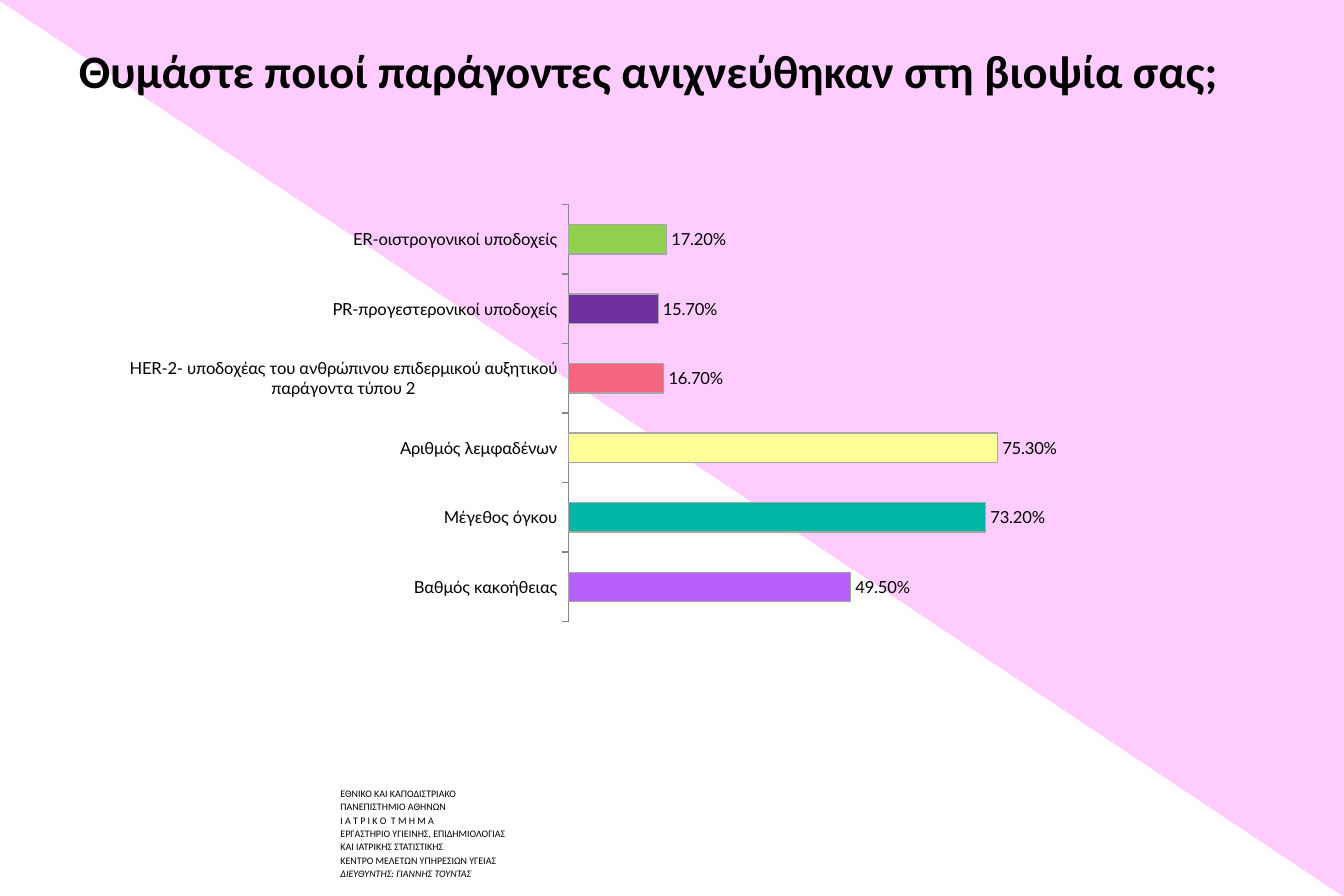
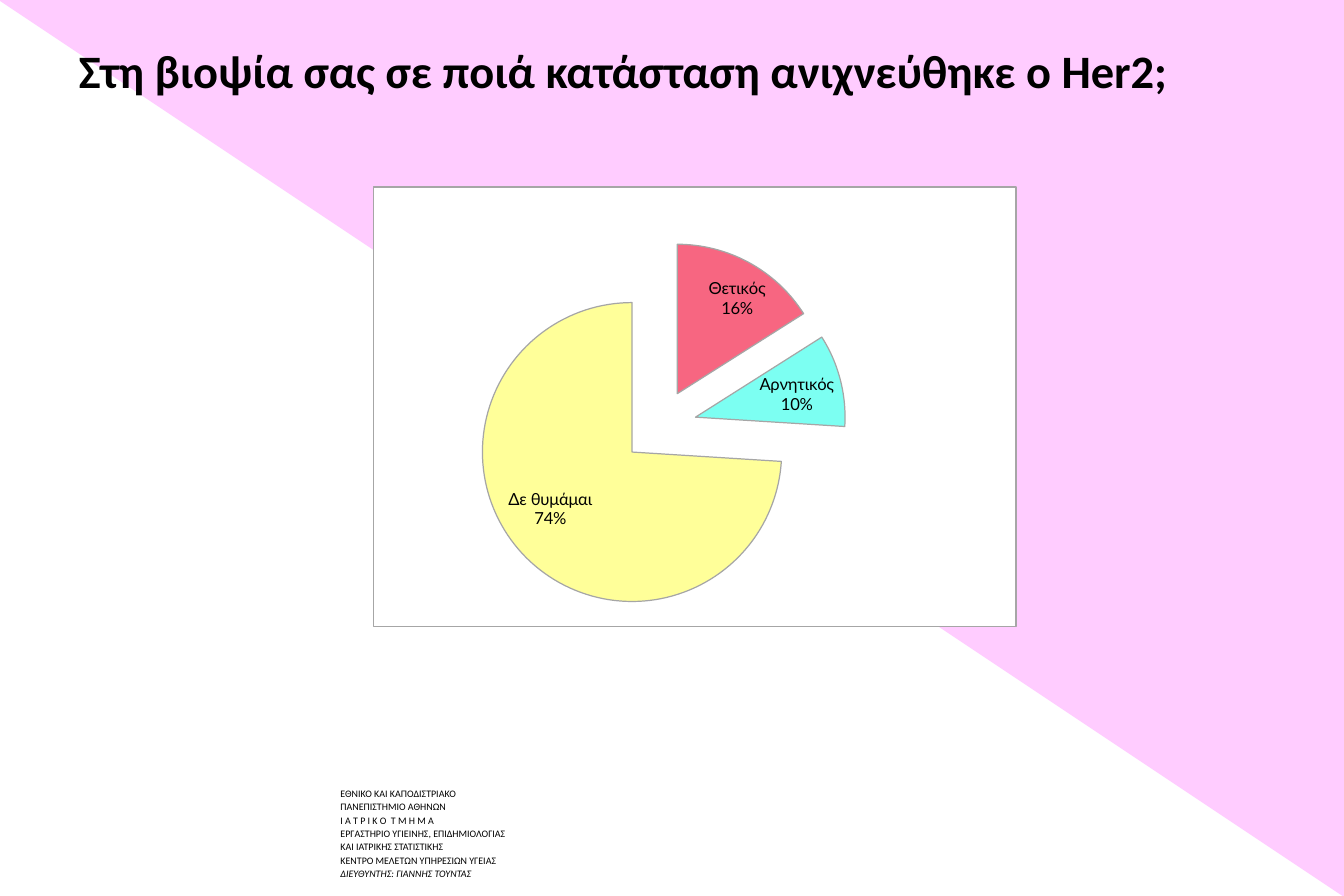
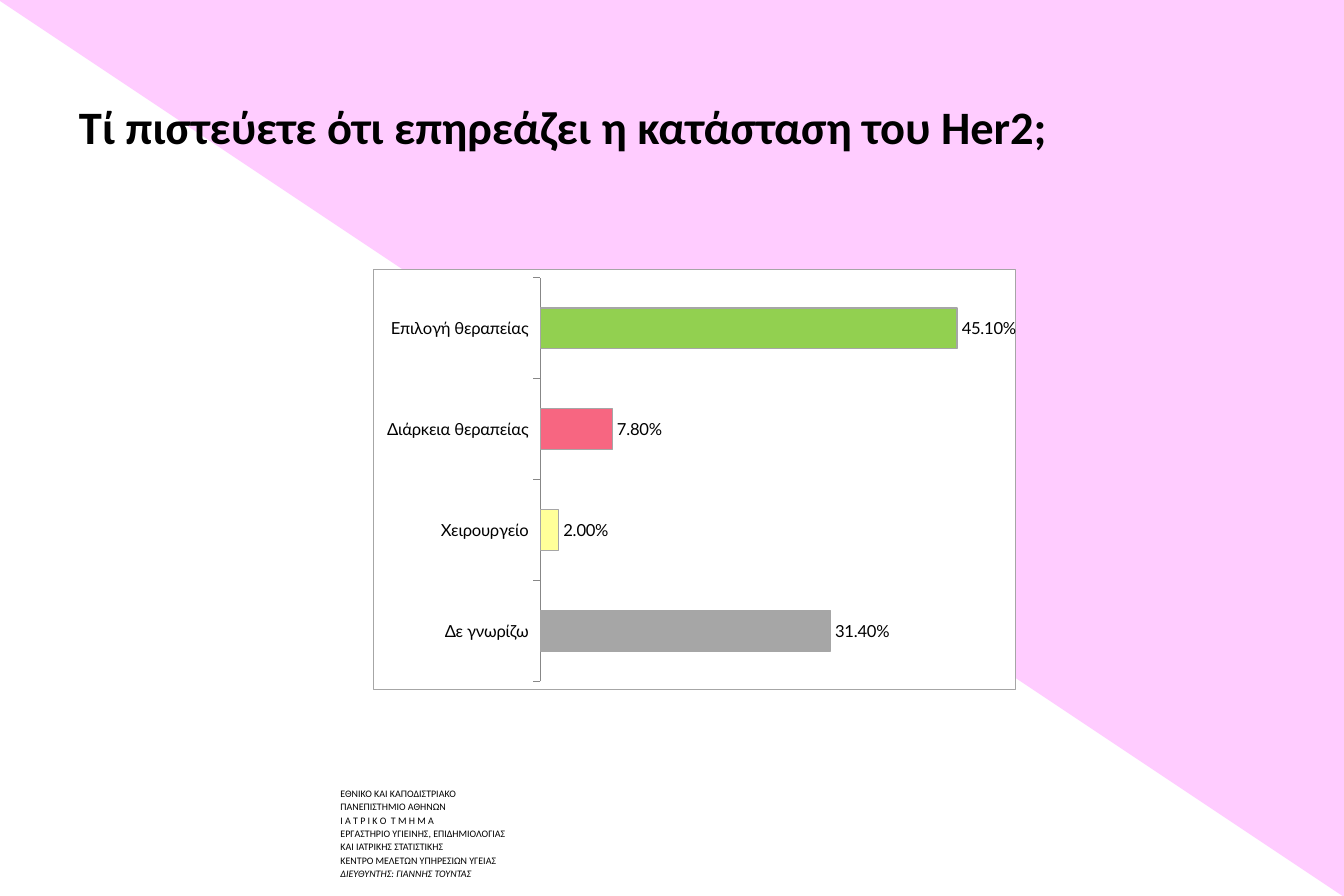
from dataclasses import dataclass

from pptx import Presentation
from pptx import util as u
from pptx.chart.data import CategoryChartData
from pptx.dml.color import RGBColor
from pptx.enum import chart as kinds, shapes, text
from pptx.oxml import parse_xml
from pptx.oxml.ns import nsdecls, qn

SCALE = 9144  # EMU per px, 100 px to the inch
WIDE, HIGH = 1125, 750


@dataclass(frozen=True)
class Theme:
    ink: str = "000000"
    paper: str = "FFFFFF"
    pink: str = "FFCCFF"
    edge: str = "A6A6A6"
    axis: str = "878787"
    green: str = "92D050"
    plum: str = "7030A0"
    rose: str = "F76681"
    lemon: str = "FFFF99"
    teal: str = "00B7A5"
    violet: str = "B760F9"
    aqua: str = "7CFFF2"
    font: str = "Calibri"
    chart_font: str = "Lato"
    title_size: int = 28
    chart_size: int = 10
    foot_size: int = 6
    hair: float = 0.75


T = Theme()


@dataclass(frozen=True)
class Box:
    x: int
    y: int
    w: int
    h: int

    def emu(self) -> tuple[int, ...]:
        return tuple(v * SCALE for v in (self.x, self.y, self.w, self.h))


@dataclass(frozen=True)
class Item:
    name: str
    value: float
    color: str


@dataclass(frozen=True)
class Graph:
    box: Box
    plot: tuple[float, float, float, float]  # shares of the chart: x, y, w, h
    items: tuple[Item, ...]
    framed: bool = True
    pie: bool = False
    top: float = 1.0
    gap: int = 150
    overlap: int = 0


@dataclass(frozen=True)
class Page:
    title: str
    graph: Graph
    title_box: Box = Box(56, 30, 1012, 125)


FOOT_BOX = Box(216, 626, 236, 113)
FOOT = (
    "ΕΘΝΙΚΟ ΚΑΙ ΚΑΠΟΔΙΣΤΡΙΑΚΟ",
    "ΠΑΝΕΠΙΣΤΗΜΙΟ ΑΘΗΝΩΝ",
    "Ι Α Τ Ρ Ι Κ Ο  Τ Μ Η Μ Α",
    "ΕΡΓΑΣΤΗΡΙΟ ΥΓΙΕΙΝΗΣ, ΕΠΙΔΗΜΙΟΛΟΓΙΑΣ",
    "ΚΑΙ ΙΑΤΡΙΚΗΣ ΣΤΑΤΙΣΤΙΚΗΣ",
    "ΚΕΝΤΡΟ ΜΕΛΕΤΩΝ ΥΠΗΡΕΣΙΩΝ ΥΓΕΙΑΣ",
    "ΔΙΕΥΘΥΝΤΗΣ: ΓΙΑΝΝΗΣ ΤΟΥΝΤΑΣ",
)

PAGES = (
    Page(
        "Θυμάστε ποιοί παράγοντες ανιχνεύθηκαν στη βιοψία σας;",
        Graph(
            Box(86, 148, 867, 388),
            (0.45, 0.06, 0.44, 0.9),
            (
                Item("ER-οιστρογονικοί υποδοχείς", 0.172, T.green),
                Item("PR-προγεστερονικοί υποδοχείς", 0.157, T.plum),
                Item(
                    "HER-2- υποδοχέας του ανθρώπινου επιδερμικού "
                    "αυξητικού παράγοντα τύπου 2",
                    0.167,
                    T.rose,
                ),
                Item("Αριθμός λεμφαδένων", 0.753, T.lemon),
                Item("Μέγεθος όγκου", 0.732, T.teal),
                Item("Βαθμός κακοήθειας", 0.495, T.violet),
            ),
            framed=False,
            top=0.8,
            gap=136,
        ),
    ),
    Page(
        "Στη βιοψία σας σε ποιά κατάσταση ανιχνεύθηκε ο Her2;",
        Graph(
            Box(312, 156, 539, 369),
            (0.15, 0.12, 0.59, 0.85),
            (
                Item("Θετικός", 16, T.rose),
                Item("Αρνητικός", 10, T.aqua),
                Item("Δε θυμάμαι", 74, T.lemon),
            ),
            pie=True,
        ),
    ),
    Page(
        "Τί πιστεύετε ότι επηρεάζει η κατάσταση του Her2;",
        Graph(
            Box(312, 225, 539, 353),
            (0.26, 0.02, 0.72, 0.96),
            (
                Item("Επιλογή θεραπείας", 0.451, T.green),
                Item("Διάρκεια θεραπείας", 0.078, T.rose),
                Item("Χειρουργείο", 0.02, T.lemon),
                Item("Δε γνωρίζω", 0.314, T.edge),
            ),
            top=0.5,
            overlap=-25,
        ),
        Box(56, 77, 1012, 78),
    ),
)


def rgb(code: str) -> RGBColor:
    return RGBColor.from_string(code)


def style(font, name: str, size: int) -> None:
    font.name = name
    font.size = u.Pt(size)
    font.color.rgb = rgb(T.ink)


def rule(line, color: str, width: float) -> None:
    line.color.rgb = rgb(color)
    line.width = u.Pt(width)


def node(tag: str, inner: str = ""):
    """Build a chart or drawing element that has no public method."""
    return parse_xml(f"<{tag} {nsdecls('c', 'a')}>{inner}</{tag}>")


def add_foot(slide):
    box = slide.shapes.add_textbox(*FOOT_BOX.emu())
    frame = box.text_frame
    frame.word_wrap = True
    frame.vertical_anchor = text.MSO_ANCHOR.MIDDLE
    frame.margin_left, frame.margin_top = 69 * SCALE, 33 * SCALE
    frame.margin_right, frame.margin_bottom = 10 * SCALE, 0
    frame.text = "\n".join(FOOT)
    for i, para in enumerate(frame.paragraphs):
        para.line_spacing = 0.7
        if i:
            para.space_before = u.Pt(T.foot_size / 2)
        style(para.runs[0].font, T.font, T.foot_size)
    frame.paragraphs[-1].runs[0].font.italic = True
    return box


def add_slope(slide):
    """Draw the diagonal that crosses the slide."""
    line = slide.shapes.add_connector(
        shapes.MSO_CONNECTOR.STRAIGHT, 0, 0, WIDE * SCALE, HIGH * SCALE
    )
    rule(line.line, T.pink, 1)
    line.element.spPr.append(node("a:effectLst"))
    return line


def add_wedge(slide):
    """Fill the half above the diagonal."""
    wedge = slide.shapes.add_shape(
        shapes.MSO_SHAPE.RIGHT_TRIANGLE, *Box(0, 0, WIDE, HIGH).emu()
    )
    wedge.rotation = 180
    wedge.shadow.inherit = False
    wedge.fill.solid()
    wedge.fill.fore_color.rgb = rgb(T.pink)
    wedge.line.fill.background()
    return wedge


def share(master, slide) -> None:
    """Draw the common parts and move them behind the master's placeholders."""
    tree = master.shapes.element
    parts = (add_foot(slide), add_slope(slide), add_wedge(slide))
    for i, part in enumerate(parts):
        part.element.xpath(".//p:cNvPr")[0].set("id", str(100 + i))
        tree.insert(2 + i, part.element)


def set_title(slide, page: Page) -> None:
    title = slide.shapes.title
    title.left, title.top, title.width, title.height = page.title_box.emu()
    frame = title.text_frame
    frame.text = page.title
    frame.auto_size = text.MSO_AUTO_SIZE.NONE
    frame.vertical_anchor = text.MSO_ANCHOR.TOP
    para = frame.paragraphs[0]
    para.alignment = text.PP_ALIGN.LEFT
    style(para.runs[0].font, T.font, T.title_size)
    para.runs[0].font.bold = True


def set_area(chart, graph: Graph) -> None:
    """Place the plot and give the chart its ground and frame."""
    area = chart.element.find(qn("c:chart"))
    plot = area.find(qn("c:plotArea"))
    for old in plot.findall(qn("c:layout")):
        plot.remove(old)
    modes = '<c:layoutTarget val="inner"/><c:xMode val="edge"/><c:yMode val="edge"/>'
    sizes = "".join(f'<c:{k} val="{v}"/>' for k, v in zip("xywh", graph.plot))
    plot.insert(0, node("c:layout", f"<c:manualLayout>{modes}{sizes}</c:manualLayout>"))
    empty = "<a:noFill/><a:ln><a:noFill/></a:ln>"
    plot.append(node("c:spPr", empty))
    solid = '<a:solidFill><a:srgbClr val="{}"/></a:solidFill>'
    frame = (
        f'{solid.format(T.paper)}<a:ln w="{u.Pt(T.hair)}">{solid.format(T.edge)}</a:ln>'
    )
    area.addnext(node("c:spPr", frame if graph.framed else empty))


def set_bars(chart, graph: Graph) -> None:
    plot = chart.plots[0]
    plot.gap_width, plot.overlap = graph.gap, graph.overlap
    cats, vals = chart.category_axis, chart.value_axis
    cats.reverse_order = True
    cats.has_major_gridlines = vals.has_major_gridlines = False
    cats.major_tick_mark = kinds.XL_TICK_MARK.OUTSIDE
    cats.minor_tick_mark = kinds.XL_TICK_MARK.NONE
    rule(cats.format.line, T.axis, T.hair)
    vals.minimum_scale, vals.maximum_scale = 0, graph.top
    vals.visible = False


def set_pie(chart, labels) -> None:
    """Pull the slices apart and name each above its share."""
    chart.element.xpath(".//c:ser/c:spPr")[0].addnext(
        parse_xml(f'<c:explosion {nsdecls("c")} val="25"/>')
    )
    labels.show_value = False
    labels.show_category_name = labels.show_percentage = True
    last = chart.element.xpath(".//c:ser/c:dLbls/c:showBubbleSize")[0]
    last.addnext(node("c:separator", "\n"))


def add_graph(slide, graph: Graph) -> None:
    data = CategoryChartData()
    data.categories = [item.name for item in graph.items]
    data.add_series("Series 1", [item.value for item in graph.items])
    types, spots = kinds.XL_CHART_TYPE, kinds.XL_LABEL_POSITION
    kind = types.PIE if graph.pie else types.BAR_CLUSTERED
    chart = slide.shapes.add_chart(kind, *graph.box.emu(), data).chart
    chart.has_title = chart.has_legend = False
    style(chart.font, T.chart_font, T.chart_size)
    chart.plots[0].vary_by_categories = graph.pie
    series = chart.plots[0].series[0]
    rule(series.format.line, T.edge, T.hair)
    for i, item in enumerate(graph.items):
        look = series.points[i].format
        look.fill.solid()
        look.fill.fore_color.rgb = rgb(item.color)
        rule(look.line, T.edge, T.hair)
    labels = series.data_labels
    labels.show_value = True
    labels.number_format = "0%" if graph.pie else "0.00%"
    labels.number_format_is_linked = False
    labels.position = spots.BEST_FIT if graph.pie else spots.OUTSIDE_END
    if graph.pie:
        set_pie(chart, labels)
    else:
        set_bars(chart, graph)
    set_area(chart, graph)


def main() -> None:
    deck = Presentation()
    deck.slide_width, deck.slide_height = WIDE * SCALE, HIGH * SCALE
    layout = deck.slide_layouts.get_by_name("Title Only")
    for page in PAGES:
        slide = deck.slides.add_slide(layout)
        set_title(slide, page)
        add_graph(slide, page.graph)
    share(deck.slide_master, deck.slides[0])
    deck.save("out.pptx")


if __name__ == "__main__":
    main()
